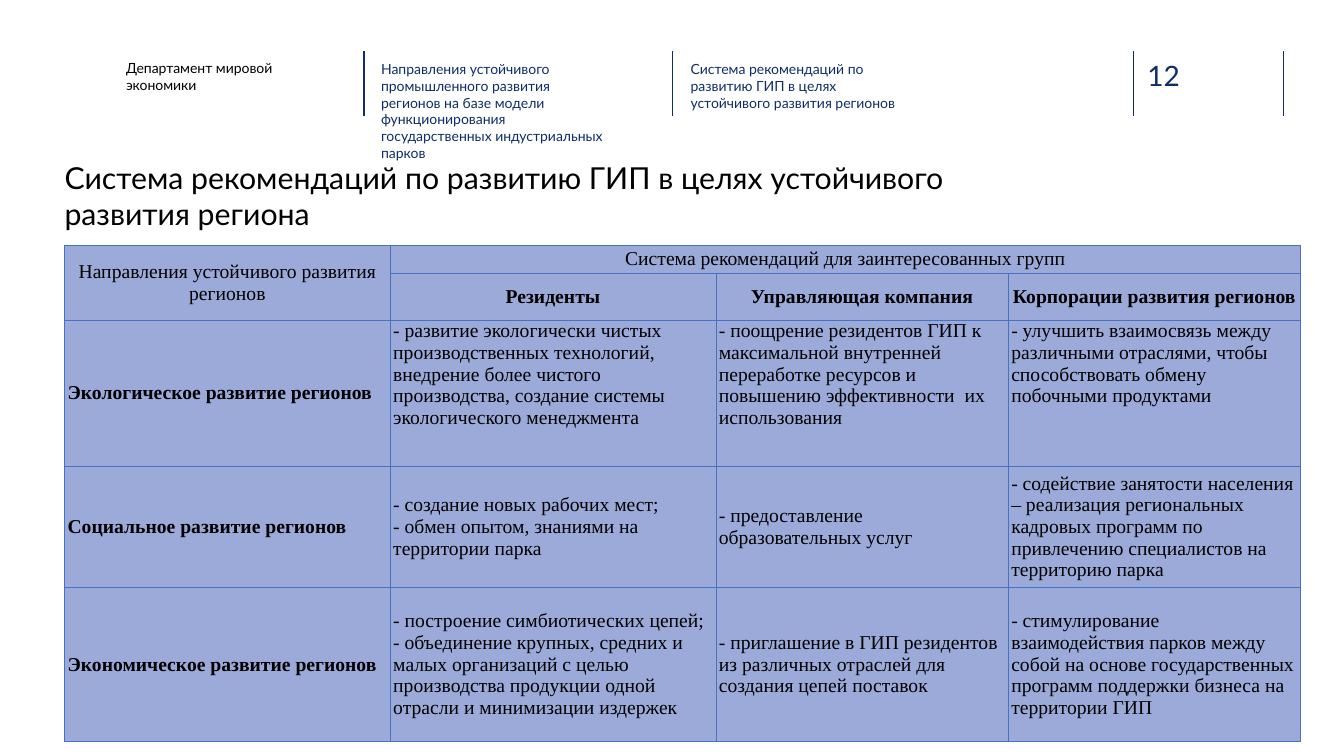
from dataclasses import dataclass

from lxml import etree
from pptx import Presentation
from pptx.dml.color import RGBColor
from pptx.enum.shapes import MSO_CONNECTOR
from pptx.enum.text import MSO_ANCHOR, PP_ALIGN
from pptx.oxml.ns import qn
from pptx.slide import Slide
from pptx.table import _Cell
from pptx.text.text import TextFrame
from pptx.util import Inches, Pt

STRAIGHT = MSO_CONNECTOR.STRAIGHT
TOP, MIDDLE = MSO_ANCHOR.TOP, MSO_ANCHOR.MIDDLE
LEFT, CENTER = PP_ALIGN.LEFT, PP_ALIGN.CENTER
BLACK = RGBColor(0x00, 0x00, 0x00)
NAVY = RGBColor(0x10, 0x2D, 0x69)
HEADER_NAVY = RGBColor(0x0E, 0x2D, 0x69)
BORDER_BLUE = RGBColor(0x44, 0x72, 0xC4)
CELL_BLUE = RGBColor(0x9B, 0xAA, 0xD9)
HEADING_FONT = "Lato"
TABLE_FONT = "Times New Roman"


@dataclass(frozen=True)
class TextStyle:
    font: str
    size: float
    color: RGBColor
    bold: bool = False
    alignment: PP_ALIGN = LEFT


@dataclass(frozen=True)
class Label:
    left: float
    top: float
    width: float
    height: float
    lines: tuple[str, ...]
    style: TextStyle


@dataclass(frozen=True)
class CellText:
    lines: tuple[str, ...]
    style: TextStyle
    anchor: MSO_ANCHOR = MIDDLE


HEADER = TextStyle(HEADING_FONT, 10, HEADER_NAVY)
DEPARTMENT = TextStyle(HEADING_FONT, 10, BLACK)
PAGE_NUMBER = TextStyle(HEADING_FONT, 20, NAVY)
TITLE = TextStyle(HEADING_FONT, 21.6, BLACK)
GROUP_HEAD = TextStyle(TABLE_FONT, 14, BLACK, alignment=CENTER)
COLUMN_HEAD = TextStyle(TABLE_FONT, 14, BLACK, bold=True, alignment=CENTER)
ROW_HEAD = TextStyle(TABLE_FONT, 14, BLACK, bold=True)
BODY = TextStyle(TABLE_FONT, 14, BLACK)

DIVIDERS = (3.61, 6.67, 11.24, 12.73)
DIVIDER_TOP, DIVIDER_BOTTOM = 0.51, 1.15

LABELS = (
    Label(11.38, 0.58, 0.73, 0.34, ("12",), PAGE_NUMBER),
    Label(1.25, 0.59, 2.08, 0.45, ("Департамент мировой", "экономики"), DEPARTMENT),
    Label(3.78, 0.6, 2.26, 0.45, (
        "Направления устойчивого промышленного развития регионов на базе модели "
        "функционирования государственных индустриальных парков",), HEADER),
    Label(6.85, 0.6, 2.26, 0.45, (
        "Система рекомендаций по развитию ГИП в целях устойчивого развития регионов",), HEADER),
    Label(0.64, 1.58, 8.74, 0.85, (
        "Система рекомендаций по развитию ГИП в целях устойчивого развития региона",), TITLE),
)

TABLE_LEFT, TABLE_TOP = 0.64, 2.43
COLUMN_WIDTHS = (3.23, 3.23, 2.9, 2.9)
ROW_HEIGHTS = (0.28, 0.43, 1.45, 1.2, 1.53)
GROUP_HEADS = (
    (0, "Направления устойчивого развития регионов"),
    (1, "Система рекомендаций для заинтересованных групп"),
)
COLUMN_HEADS = ("Резиденты", "Управляющая компания", "Корпорации развития регионов")
RECOMMENDATIONS = (
    ("Экологическое развитие регионов", TOP, (
        ("- развитие экологически чистых производственных технологий, внедрение более "
         "чистого производства, создание системы экологического менеджмента",),
        ("- поощрение резидентов ГИП к максимальной внутренней переработке ресурсов и "
         "повышению эффективности  их использования",),
        ("- улучшить взаимосвязь между различными отраслями, чтобы способствовать "
         "обмену побочными продуктами",),
    )),
    ("Социальное развитие регионов", MIDDLE, (
        ("- создание новых рабочих мест;", "- обмен опытом, знаниями на территории парка"),
        ("- предоставление образовательных услуг",),
        ("- содействие занятости населения – реализация региональных кадровых программ "
         "по привлечению специалистов на территорию парка",),
    )),
    ("Экономическое развитие регионов", MIDDLE, (
        ("- построение симбиотических цепей;",
         "- объединение крупных, средних и малых организаций с целью производства "
         "продукции одной отрасли и минимизации издержек"),
        ("- приглашение в ГИП резидентов из различных отраслей для создания цепей поставок",),
        ("- стимулирование взаимодействия парков между собой на основе государственных "
         "программ поддержки бизнеса на территории ГИП",),
    )),
)


def write_lines(text_frame: TextFrame, lines: tuple[str, ...], style: TextStyle) -> None:
    for index, line in enumerate(lines):
        paragraph = text_frame.add_paragraph() if index else text_frame.paragraphs[0]
        paragraph.alignment = style.alignment
        run = paragraph.add_run()
        run.text = line
        run.font.name = style.font
        run.font.size = Pt(style.size)
        run.font.bold = style.bold
        run.font.color.rgb = style.color


def add_label(slide: Slide, label: Label) -> None:
    box = slide.shapes.add_textbox(
        Inches(label.left), Inches(label.top), Inches(label.width), Inches(label.height))
    frame = box.text_frame
    frame.word_wrap = True
    frame.margin_left = frame.margin_right = frame.margin_top = frame.margin_bottom = 0
    write_lines(frame, label.lines, label.style)


def add_divider(slide: Slide, left: float) -> None:
    divider = slide.shapes.add_connector(
        STRAIGHT, Inches(left), Inches(DIVIDER_TOP), Inches(left), Inches(DIVIDER_BOTTOM))
    divider.line.color.rgb = NAVY
    divider.line.width = Pt(1)
    etree.SubElement(divider._element.spPr, qn("a:effectLst"))


def format_cell(cell: _Cell) -> None:
    cell.margin_left = cell.margin_right = Inches(0.03)
    cell.margin_top = cell.margin_bottom = 0
    properties = cell._tc.get_or_add_tcPr()
    for side in ("lnL", "lnR", "lnT", "lnB"):
        border = etree.SubElement(properties, qn(f"a:{side}"), w=str(Pt(0.5)))
        fill = etree.SubElement(border, qn("a:solidFill"))
        etree.SubElement(fill, qn("a:srgbClr"), val=str(BORDER_BLUE))
    cell.fill.solid()
    cell.fill.fore_color.rgb = CELL_BLUE


def table_contents() -> dict[tuple[int, int], CellText]:
    contents = {(0, column): CellText((text,), GROUP_HEAD) for column, text in GROUP_HEADS}
    for column, text in enumerate(COLUMN_HEADS, start=1):
        contents[1, column] = CellText((text,), COLUMN_HEAD)
    for row, (direction, anchor, advice) in enumerate(RECOMMENDATIONS, start=2):
        contents[row, 0] = CellText((direction,), ROW_HEAD)
        for column, lines in enumerate(advice, start=1):
            contents[row, column] = CellText(lines, BODY, anchor)
    return contents


def add_recommendations(slide: Slide) -> None:
    table = slide.shapes.add_table(
        len(ROW_HEIGHTS), len(COLUMN_WIDTHS), Inches(TABLE_LEFT), Inches(TABLE_TOP),
        Inches(sum(COLUMN_WIDTHS)), Inches(sum(ROW_HEIGHTS))).table
    table.first_row = table.horz_banding = False
    for column, width in zip(table.columns, COLUMN_WIDTHS):
        column.width = Inches(width)
    for row, height in zip(table.rows, ROW_HEIGHTS):
        row.height = Inches(height)
    for cell in table.iter_cells():
        format_cell(cell)
    table.cell(0, 0).merge(table.cell(1, 0))
    table.cell(0, 1).merge(table.cell(0, 3))
    for (row, column), content in table_contents().items():
        cell = table.cell(row, column)
        cell.vertical_anchor = content.anchor
        write_lines(cell.text_frame, content.lines, content.style)


def main() -> None:
    presentation = Presentation()
    presentation.slide_width = Inches(13.33)
    presentation.slide_height = Inches(7.5)
    slide = presentation.slides.add_slide(presentation.slide_layouts[6])
    for left in DIVIDERS:
        add_divider(slide, left)
    for label in LABELS:
        add_label(slide, label)
    add_recommendations(slide)
    presentation.save("out.pptx")


if __name__ == "__main__":
    main()
